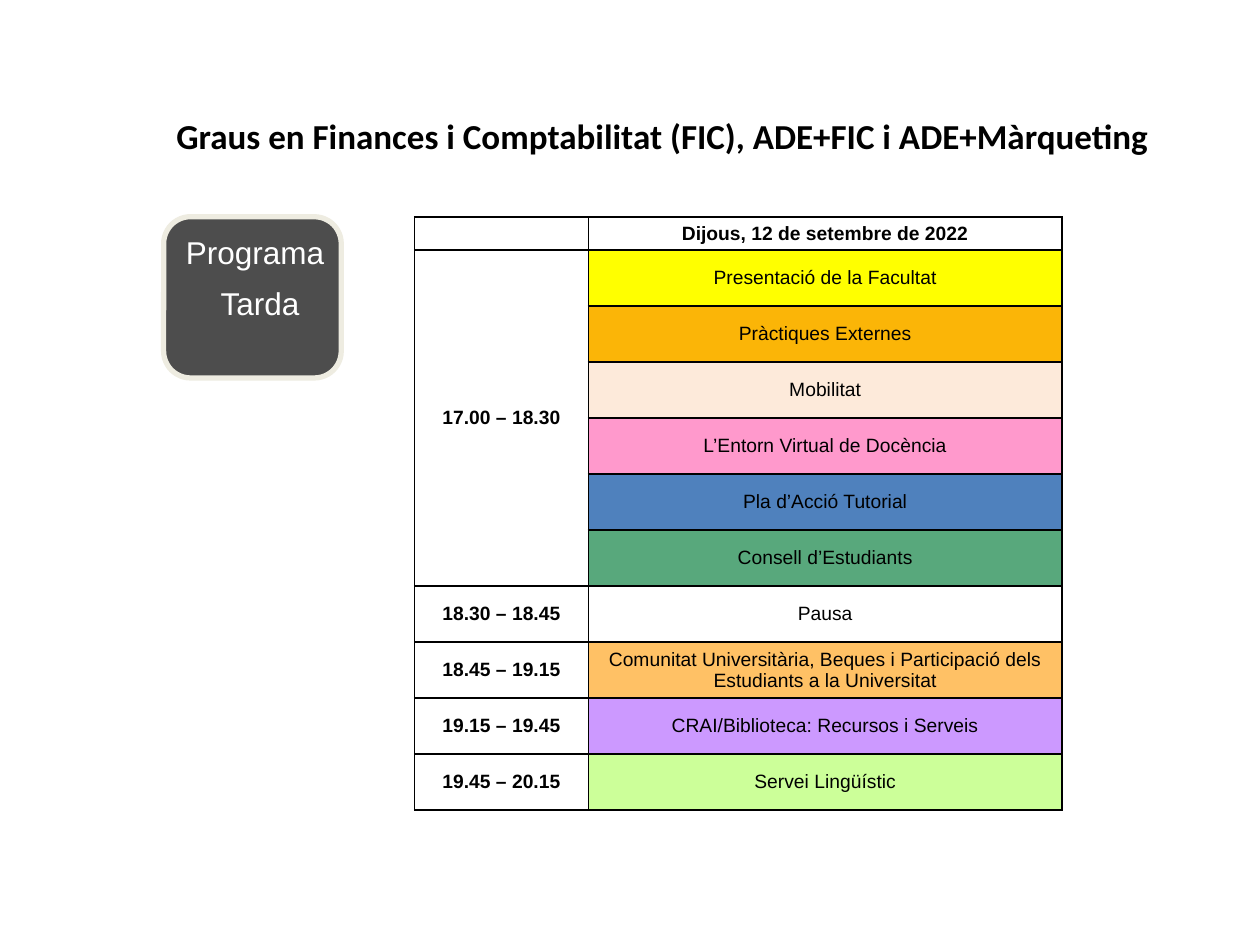
"""Build the afternoon programme slide for the finance degrees."""
from dataclasses import dataclass
from typing import Optional

from lxml.etree import SubElement
from pptx import Presentation
from pptx.dml.color import RGBColor
from pptx.enum.shapes import MSO_SHAPE as Shape
from pptx.enum.text import MSO_ANCHOR as Anchor, MSO_AUTO_SIZE as AutoSize, PP_ALIGN as Align
from pptx.oxml.ns import qn
from pptx.util import Cm, Pt

BLACK, WHITE = "000000", "FFFFFF"
TITLE = "Graus en Finances i Comptabilitat (FIC), ADE+FIC i ADE+Màrqueting"
DATE = "Dijous, 12 de setembre de 2022"
HEADER_HEIGHT, ROW_HEIGHT = Cm(0.66), Cm(1.13)
TIME_WIDTH, SESSION_WIDTH = Cm(3.5), Cm(9.55)


@dataclass
class Session:
    name: str
    fill: str


@dataclass
class Slot:
    time: str
    sessions: list[Session]


SLOTS = [
    Slot("17.00 – 18.30", [
        Session("Presentació de la Facultat", "FFFF00"),
        Session("Pràctiques Externes", "FBB507"),
        Session("Mobilitat", "FDEADA"),
        Session("L’Entorn Virtual de Docència", "FF99CC"),
        Session("Pla d’Acció Tutorial", "4F81BD"),
        Session("Consell d’Estudiants", "58A87C"),
    ]),
    Slot("18.30 – 18.45", [Session("Pausa", WHITE)]),
    Slot("18.45 – 19.15", [Session(
        "Comunitat Universitària, Beques i Participació dels Estudiants a la Universitat", "FFC165")]),
    Slot("19.15 – 19.45", [Session("CRAI/Biblioteca: Recursos i Serveis", "CC99FF")]),
    Slot("19.45 – 20.15", [Session("Servei Lingüístic", "CCFF99")]),
]


def color(value: str) -> RGBColor:
    return RGBColor.from_string(value)


def add_span(para, text: str, size: float, font: str = "Arial",
             ink: str = BLACK, bold: bool = False) -> None:
    span = para.add_run()
    span.text = text
    span.font.name, span.font.size, span.font.bold = font, Pt(size), bold
    span.font.color.rgb = color(ink)


def add_title(page) -> None:
    box = page.shapes.title
    box.left, box.top, box.width, box.height = Cm(3.3), Cm(2.18), Cm(20.8), Cm(1.12)
    frame = box.text_frame
    frame.word_wrap, frame.auto_size = True, AutoSize.NONE
    frame.vertical_anchor = Anchor.TOP
    para = frame.paragraphs[0]
    para.alignment = Align.LEFT
    add_span(para, TITLE, 20, "Calibri", bold=True)


def add_badge(page) -> None:
    group = page.shapes.add_group_shape()
    badge = group.shapes.add_shape(Shape.ROUNDED_RECTANGLE, Cm(3.3), Cm(4.37), Cm(3.58), Cm(3.25))
    badge.shadow.inherit = False
    badge.fill.solid()
    badge.fill.fore_color.rgb = color("4D4D4D")
    badge.line.color.rgb = color("EEECE1")
    badge.line.width = Pt(3)

    frame = group.shapes.add_textbox(Cm(3.5), Cm(4.65), Cm(3.58), Cm(2.03)).text_frame
    frame.word_wrap = True
    first, second = frame.paragraphs[0], frame.add_paragraph()
    second.space_before = Pt(10)
    second._p.get_or_add_pPr().set("marL", str(Cm(0.7)))
    for para, text in ((first, "Programa"), (second, "Tarda")):
        para.line_spacing = 0.9
        add_span(para, text, 18, ink=WHITE)


def add_borders(cell) -> None:
    properties = cell._tc.get_or_add_tcPr()
    for side in ("lnL", "lnR", "lnT", "lnB"):
        line = SubElement(properties, qn(f"a:{side}"), w=str(Pt(1)))
        SubElement(SubElement(line, qn("a:solidFill")), qn("a:srgbClr"), val=BLACK)


def style_cell(cell, text: str = "", bold: bool = False, fill: Optional[str] = None) -> None:
    add_borders(cell)
    if fill:
        cell.fill.solid()
        cell.fill.fore_color.rgb = color(fill)
    else:
        cell.fill.background()
    cell.vertical_anchor = Anchor.MIDDLE
    cell.margin_left = cell.margin_right = Cm(0.18)
    cell.margin_top = cell.margin_bottom = Cm(0.1)
    para = cell.text_frame.paragraphs[0]
    para.alignment = Align.CENTER
    if text:
        add_span(para, text, 11, bold=bold)
    else:
        SubElement(para._p, qn("a:endParaRPr"), sz="1100")


def add_schedule(page) -> None:
    count = sum(len(slot.sessions) for slot in SLOTS)
    table = page.shapes.add_table(
        count + 1, 2, Cm(8.36), Cm(4.37), TIME_WIDTH + SESSION_WIDTH,
        HEADER_HEIGHT + count * ROW_HEIGHT).table
    table.first_row = table.horz_banding = False
    table.columns[0].width, table.columns[1].width = TIME_WIDTH, SESSION_WIDTH
    for index, row in enumerate(table.rows):
        row.height = ROW_HEIGHT if index else HEADER_HEIGHT
    style_cell(table.cell(0, 0))
    style_cell(table.cell(0, 1), DATE, bold=True)
    start = 1
    for slot in SLOTS:
        for index, session in enumerate(slot.sessions):
            style_cell(table.cell(start + index, 0), "" if index else slot.time, bold=True)
            style_cell(table.cell(start + index, 1), session.name, fill=session.fill)
        end = start + len(slot.sessions)
        if end - start > 1:
            table.cell(start, 0).merge(table.cell(end - 1, 0))
        start = end


def main() -> None:
    deck = Presentation()
    deck.slide_width, deck.slide_height = Cm(25.4), Cm(19.05)
    page = deck.slides.add_slide(deck.slide_layouts[5])
    add_badge(page)
    add_schedule(page)
    add_title(page)
    deck.save("out.pptx")


if __name__ == "__main__":
    main()
